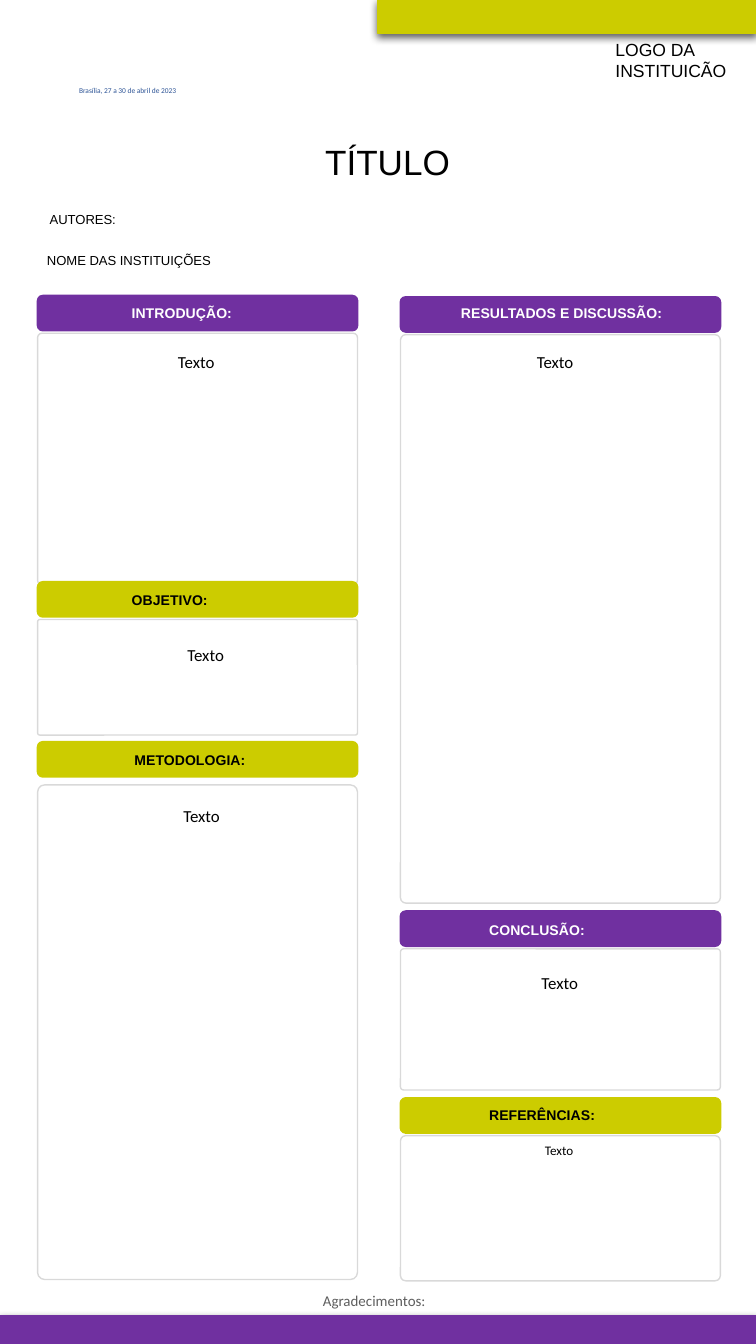
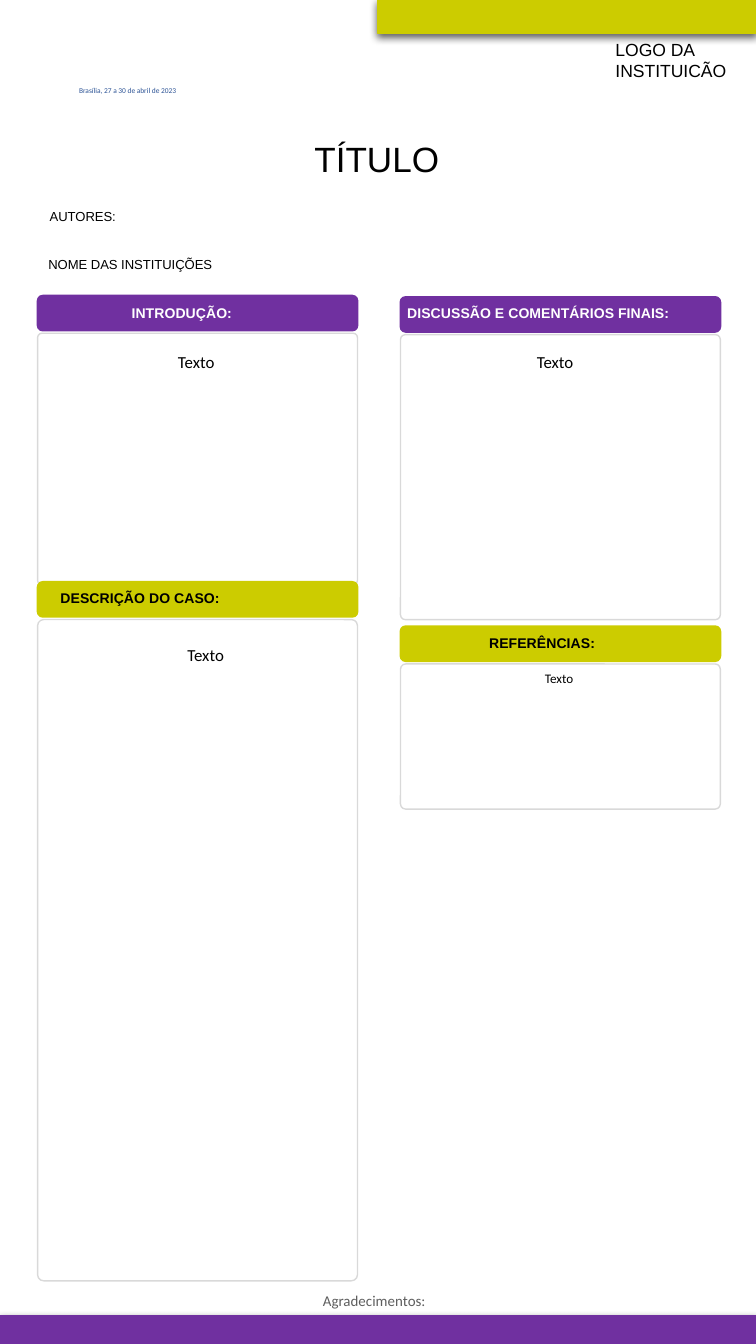
from dataclasses import dataclass

from lxml import etree
from pptx import Presentation
from pptx.dml.color import RGBColor
from pptx.enum import shapes as sh, text as tx
from pptx.oxml import ns
from pptx.util import Inches, Pt

HEX = {"lime": "CCCC00", "purple": "7030A0", "black": "000000", "white": "FFFFFF",
       "frame": "D9D9D9", "blue": "2F5597", "gray": "5E5E5E"}
HIGH = 10
WIDE = HIGH * 9 / 16
COL_W, HEAD_H = 2.38, 0.26
LEFT, RIGHT = 0.28, 2.98


@dataclass
class Part:
    """Describe a poster section, with offsets from its heading bar."""
    name: str
    fill: str
    label: tuple
    tall: float
    curve: float
    body: tuple
    gap: float = 0.28
    size: float = 9


INTRO = Part("INTRODUÇÃO:", "purple", (0.69, 0.05, 1), 1.87, 0.017, (0.04, 0.35, 2.28))
GOAL = Part("OBJETIVO:", "lime", (0.69, 0.06, 1), 0.86, 0.019, (0.11, 0.4, 2.28))
METHOD = Part("METODOLOGIA:", "lime", (0.71, 0.06, 1), 3.68, 0.022, (0.08, 0.41, 2.28), 0.32)
RESULT = Part("RESULTADOS E DISCUSSÃO:", "purple", (0.44, 0.04, 1.65), 4.23, 0.017,
              (0.01, 0.34, 2.28))
CLOSE = Part("CONCLUSÃO:", "purple", (0.65, 0.06, 1.04), 1.05, 0.022, (0, 0.39, 2.37))
REFS = Part("REFERÊNCIAS:", "lime", (0.65, 0.05, 1.04), 1.08, 0.036, (0.04, 0.27, 2.28), size=7)
CASE = Part("DESCRIÇÃO DO CASO:", "lime", (0.16, 0.04, 2.02), 4.92, 0.019, (0.11, 0.4, 2.28))
TALK = Part("DISCUSSÃO E COMENTÁRIOS FINAIS:", "purple", (0.04, 0.04, 2.32), 2.12, 0.017,
            (0.01, 0.34, 2.28))


def color(key):
    """Return the named colour."""
    return RGBColor.from_string(HEX[key])


def write(slide, box, words, size, tint="black", face="Arial", bold=None,
          inset=0.01, wrap=True, center=False):
    """Add a text box whose paragraphs share one style."""
    frame = slide.shapes.add_textbox(*map(Inches, box)).text_frame
    frame.margin_left = frame.margin_right = Inches(inset)
    frame.margin_top = frame.margin_bottom = Inches(inset)
    frame.vertical_anchor = tx.MSO_ANCHOR.MIDDLE
    frame.auto_size = tx.MSO_AUTO_SIZE.SHAPE_TO_FIT_TEXT
    frame.word_wrap = wrap
    frame.text = words
    for para in frame.paragraphs:
        if center:
            para.alignment = tx.PP_ALIGN.CENTER
        for run in para.runs:
            run.font.name, run.font.size, run.font.bold = face, Pt(size), bold
            run.font.color.rgb = color(tint)


def note(slide, box, words, size, tint="black", wrap=True):
    """Add centred body text with wider margins."""
    write(slide, box, words, size, tint, "Calibri", inset=0.06, wrap=wrap, center=True)


def block(slide, box, line, width, fill=None, curve=None):
    """Add a rectangle, rounded when a curve is given."""
    kind = sh.MSO_SHAPE.RECTANGLE if curve is None else sh.MSO_SHAPE.ROUNDED_RECTANGLE
    shape = slide.shapes.add_shape(kind, *map(Inches, box))
    shape.shadow.inherit = False
    shape.line.color.rgb, shape.line.width = color(line), Pt(width)
    if fill:
        shape.fill.solid()
        shape.fill.fore_color.rgb = color(fill)
    else:
        shape.fill.background()
    if curve is not None:
        shape.adjustments[0] = curve
    return shape


def band(slide, box, fill):
    """Add an edge band with a soft shadow below it."""
    props = block(slide, box, fill, 0.75, fill).element.spPr
    glow = etree.SubElement(props.find(ns.qn("a:effectLst")), ns.qn("a:outerShdw"),
                            blurRad=str(Pt(4.5)), dist=str(Pt(1.5)),
                            dir="5400000", rotWithShape="0")
    tone = etree.SubElement(glow, ns.qn("a:srgbClr"), val=HEX["black"])
    etree.SubElement(tone, ns.qn("a:alpha"), val="63000")


def section(slide, left, top, part):
    """Place a heading bar, its label, the frame and the body text."""
    block(slide, (left, top, COL_W, HEAD_H), part.fill, 1, part.fill, 0.15)
    x, y, width = part.label
    tint = "white" if part.fill == "purple" else "black"
    write(slide, (left + x, top + y, width, 0.15), part.name, 7.5, tint, bold=True)
    block(slide, (left, top + part.gap, COL_W, part.tall), "frame", 0.75, curve=part.curve)
    x, y, width = part.body
    tall = 0.28 if part.size == 9 else 0.24
    note(slide, (left + x, top + y, width, tall), "Texto", part.size)


def header(slide, title, team, place):
    """Place the title, authors, institutions, logo text and date."""
    write(slide, (*place, 1.26, 0.14), "NOME DAS INSTITUIÇÕES", 7, wrap=False)
    write(slide, (*title, 0.96, 0.34), "TÍTULO", 18.8, wrap=False)
    write(slide, (*team, 0.52, 0.14), "AUTORES:", 7, wrap=False)
    write(slide, (4.57, 0.28, 0.86, 0.34), "LOGO DA\nINSTITUICÃO", 9.4, wrap=False)
    note(slide, (0.47, 0.58, 0.96, 0.19), "Brasília, 27 a 30 de abril de 2023", 4, "blue", False)


def poster(deck, heads, parts):
    """Add one poster slide with its bands, header, sections and thanks."""
    slide = deck.slides.add_slide(deck.slide_layouts[6])
    band(slide, (WIDE / 2, 0, WIDE / 2, 0.25), "lime")
    band(slide, (0, 9.79, WIDE, 0.21), "purple")
    header(slide, *heads)
    for left, top, part in parts:
        section(slide, left, top, part)
    note(slide, (LEFT, 9.55, 5.01, 0.26), "Agradecimentos:", 8, "gray")


def main():
    """Build both posters and save the deck."""
    deck = Presentation()
    deck.slide_width, deck.slide_height = Inches(WIDE), Inches(HIGH)
    poster(deck, ((2.41, 1.03), (0.36, 1.56), (0.34, 1.87)),
           [(LEFT, 2.2, INTRO), (LEFT, 4.33, GOAL), (LEFT, 5.52, METHOD),
            (RIGHT, 2.21, RESULT), (RIGHT, 6.78, CLOSE), (RIGHT, 8.17, REFS)])
    poster(deck, ((2.33, 1.01), (0.36, 1.54), (0.35, 1.9)),
           [(LEFT, 2.2, INTRO), (LEFT, 4.33, CASE),
            (RIGHT, 2.21, TALK), (RIGHT, 4.66, REFS)])
    deck.save("out.pptx")


if __name__ == "__main__":
    main()
